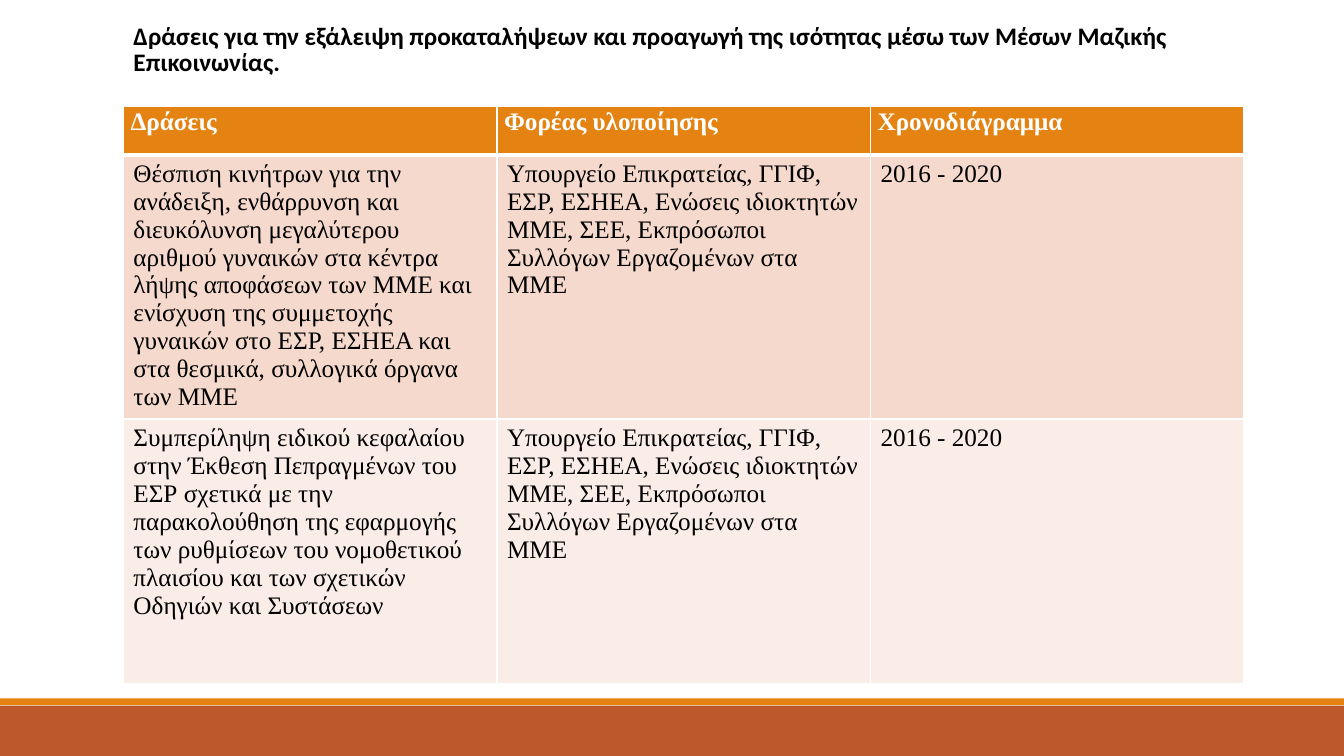
import pptx
import pptx.util
import pptx.dml.color
import pptx.enum.shapes
import pptx.enum.text
import lxml.etree

Cm = pptx.util.Cm
Pt = pptx.util.Pt
RGBColor = pptx.dml.color.RGBColor
Alignment = pptx.enum.text.PP_ALIGN

BLACK = RGBColor(0x00, 0x00, 0x00)
WHITE = RGBColor(0xFF, 0xFF, 0xFF)
ORANGE = RGBColor(0xE4, 0x83, 0x12)
RUST = RGBColor(0xBD, 0x58, 0x2C)
PEACH = RGBColor(0xF5, 0xD9, 0xCC)
PALE_PEACH = RGBColor(0xFA, 0xED, 0xE7)

TITLE = "Δράσεις για την εξάλειψη προκαταλήψεων και προαγωγή της ισότητας μέσω των Μέσων Μαζικής Επικοινωνίας."
HEADERS = ["Δράσεις", "Φορέας υλοποίησης", "Χρονοδιάγραμμα"]
BODIES = (
    "Υπουργείο Επικρατείας, ΓΓΙΦ, ΕΣΡ, ΕΣΗΕΑ, Ενώσεις ιδιοκτητών ΜΜΕ, ΣΕΕ, "
    "Εκπρόσωποι Συλλόγων Εργαζομένων στα ΜΜΕ"
)
PERIOD = "2016 - 2020"
ACTIONS = [
    "Θέσπιση κινήτρων για την ανάδειξη, ενθάρρυνση και διευκόλυνση μεγαλύτερου "
    "αριθμού γυναικών στα κέντρα λήψης αποφάσεων των ΜΜΕ και ενίσχυση της συμμετοχής "
    "γυναικών στο ΕΣΡ, ΕΣΗΕΑ και στα θεσμικά, συλλογικά όργανα των ΜΜΕ",
    "Συμπερίληψη ειδικού κεφαλαίου στην Έκθεση Πεπραγμένων του ΕΣΡ σχετικά με την "
    "παρακολούθηση της εφαρμογής των ρυθμίσεων του νομοθετικού πλαισίου και των "
    "σχετικών Οδηγιών και Συστάσεων",
]
ROWS = [HEADERS] + [[action, BODIES, PERIOD] for action in ACTIONS]
ROW_FILLS = [ORANGE, PEACH, PALE_PEACH]
ROW_HEIGHTS = [Cm(1.23), Cm(6.66), Cm(6.66)]

SLIDE_WIDTH, SLIDE_HEIGHT = Cm(33.87), Cm(19.05)
LEFT, CONTENT_WIDTH = Cm(3.11), Cm(28.24)
TITLE_HEIGHT, TABLE_TOP = Cm(2.06), Cm(2.67)
FOOTER_BARS = [(Cm(17.78), Cm(1.27), RUST), (Cm(17.6), Cm(0.17), ORANGE)]


def write_text(frame, text, *, font="Times New Roman", color=BLACK, bold=False,
               alignment=Alignment.LEFT, line_spacing=1.0, space_after=0):
    frame.word_wrap = True
    paragraph = frame.paragraphs[0]
    paragraph.alignment = alignment
    paragraph.line_spacing = line_spacing
    paragraph.space_before = Pt(0)
    paragraph.space_after = Pt(space_after)
    run = paragraph.add_run()
    run.text = text
    run.font.name = font
    run.font.size = Pt(18)
    run.font.bold = bold
    run.font.color.rgb = color


def set_borders(cell, widths):
    properties = cell._tc.get_or_add_tcPr()
    namespace = pptx.oxml.ns.qn
    for position, (side, width) in enumerate(widths.items()):
        line = lxml.etree.Element(namespace("a:ln" + side), w=str(Pt(width)))
        fill = lxml.etree.SubElement(line, namespace("a:solidFill"))
        lxml.etree.SubElement(fill, namespace("a:srgbClr"), val=str(WHITE))
        properties.insert(position, line)


def add_footer_bars(slide):
    for top, height, color in FOOTER_BARS:
        bar = slide.shapes.add_shape(
            pptx.enum.shapes.MSO_SHAPE.RECTANGLE, 0, top, SLIDE_WIDTH, height)
        bar.shadow.inherit = False
        bar.fill.solid()
        bar.fill.fore_color.rgb = color
        bar.line.fill.background()


def add_title(slide):
    title = slide.shapes.title
    title.left, title.top = LEFT, 0
    title.width, title.height = CONTENT_WIDTH, TITLE_HEIGHT
    frame = title.text_frame
    frame.auto_size = pptx.enum.text.MSO_AUTO_SIZE.NONE
    frame.vertical_anchor = pptx.enum.text.MSO_ANCHOR.BOTTOM
    write_text(frame, TITLE, font="Calibri", bold=True, line_spacing=0.85)


def add_actions_table(slide):
    table = slide.shapes.add_table(
        len(ROWS), len(HEADERS), LEFT, TABLE_TOP, CONTENT_WIDTH, sum(ROW_HEIGHTS)).table
    for row_index, texts in enumerate(ROWS):
        table.rows[row_index].height = ROW_HEIGHTS[row_index]
        is_header = row_index == 0
        for column_index, text in enumerate(texts):
            cell = table.cell(row_index, column_index)
            cell.fill.solid()
            cell.fill.fore_color.rgb = ROW_FILLS[row_index]
            set_borders(cell, {"L": 1, "R": 1, "T": 3 if row_index == 1 else 1,
                               "B": 3 if is_header else 1})
            if is_header:
                cell.margin_left = cell.margin_right = Cm(0.18)
                cell.margin_top = cell.margin_bottom = 0
                write_text(cell.text_frame, text, color=WHITE, bold=True,
                           alignment=Alignment.JUSTIFY, line_spacing=1.07, space_after=8)
            else:
                write_text(cell.text_frame, text)


def main():
    presentation = pptx.Presentation()
    presentation.slide_width, presentation.slide_height = SLIDE_WIDTH, SLIDE_HEIGHT
    slide = presentation.slides.add_slide(presentation.slide_layouts[5])
    add_footer_bars(slide)
    add_title(slide)
    add_actions_table(slide)
    presentation.save("out.pptx")


if __name__ == "__main__":
    main()
